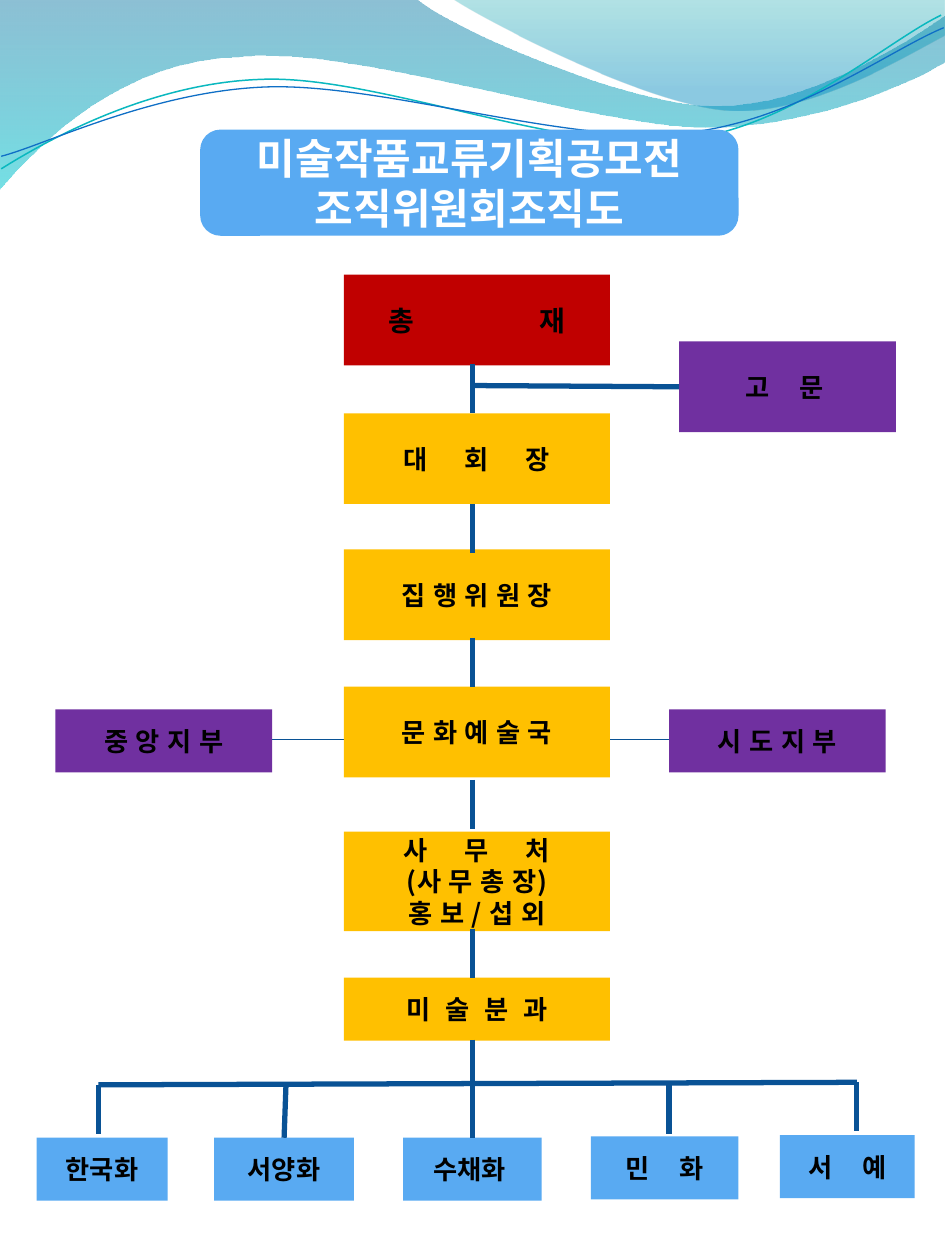
from dataclasses import dataclass

import pptx
import pptx.dml.color
import pptx.enum.shapes
import pptx.enum.text
import pptx.oxml
import pptx.oxml.ns
import pptx.util
from pptx.util import Inches

FONT = "Noto Sans CJK KR"
WIDE_SPACE_EM = 0.28
FONT_SPACE_EM = 0.22
COLORS = {
    "red": "C00000", "gold": "FFC000", "purple": "7030A0", "blue": "59AAF2",
    "line": "095295", "black": "000000", "white": "FFFFFF",
    "wave_blue": "0074A1", "wave_cyan": "00C6CF",
    "crest_teal": "00A1A9", "crest_blue": "008BBF",
    "teal_curve": "0AB8BF", "blue_curve": "0F6FC6",
}
Point = tuple[float, float]
Segment = tuple[Point, ...]
RECT = pptx.enum.shapes.MSO_SHAPE.RECTANGLE
ROUNDED = pptx.enum.shapes.MSO_SHAPE.ROUNDED_RECTANGLE
TOP, LEFT = 0, 1


@dataclass
class Box:
    text: str
    left: float
    top: float
    width: float
    height: float
    fill: str
    size: float = 15
    gap: int = 1
    color: str = "black"
    shape: pptx.enum.shapes.MSO_SHAPE = RECT
    border: float = 0


@dataclass
class Stop:
    position: float
    color: str
    opacity: int


@dataclass
class Wave:
    start: Point
    segments: list[Segment]
    stops: tuple[Stop, Stop]


@dataclass
class Curve:
    start: Point
    segments: list[Segment]
    color: str
    weight: float


TITLE = Box("미술작품교류기획공모전\n조직위원회조직도", 1.62, 1.06, 4.21, 0.78,
            "blue", 24, color="white", shape=ROUNDED, border=4.5)
SPINE = [
    Box("총 재", 2.73, 2.18, 2.11, 0.72, "red", 16, 16),
    Box("대 회 장", 2.73, 3.28, 2.11, 0.72, "gold", gap=5),
    Box("집 행 위 원 장", 2.73, 4.36, 2.11, 0.72, "gold"),
    Box("문 화 예 술 국", 2.73, 5.45, 2.11, 0.72, "gold"),
    Box("사 무 처\n(사 무 총 장)\n홍 보 / 섭 외", 2.73, 6.6, 2.11, 0.79, "gold", gap=5),
    Box("미 술 분 과", 2.73, 7.76, 2.11, 0.5, "gold", gap=2),
]
SPINE_X = 3.75
SPINE_TOPS = [2.89, 4, 5.06, 6.19, 7.37, 8.25]
DROP = 0.39
BRANCHES = [
    Box("시 도 지 부", 5.31, 5.63, 1.72, 0.5, "purple"),
    Box("중 앙 지 부", 0.44, 5.63, 1.72, 0.5, "purple"),
]
ADVISOR = Box("고 문 ", 5.39, 2.71, 1.72, 0.72, "purple", gap=4)
DIVISIONS = [
    Box("한국화", 0.29, 9.03, 1.04, 0.5, "blue"),
    Box("서양화", 1.7, 9.03, 1.11, 0.5, "blue"),
    Box("수채화 ", 3.2, 9.03, 1.1, 0.5, "blue"),
    Box("민 화", 4.69, 9.02, 1.17, 0.5, "blue", gap=4),
    Box("서 예", 6.19, 9.01, 1.07, 0.5, "blue", gap=4),
]
DROPS = [(0.78, 8.61), (2.27, 8.61), (SPINE_X, 8.61), (5.31, 8.61), (6.8, 8.59)]
WAVES = [
    Wave((0, -0.01),
         [((3.3, -0.01),),
          ((3.57, 0.22), (4.98, 0.84), (5.69, 0.84)),
          ((6.4, 0.84), (7.19, 0.34), (7.5, 0.12)),
          ((7.51, 0.48),),
          ((7.38, 0.58), (6.52, 1.01), (5.59, 1.01)),
          ((4.66, 1), (2.86, 0.37), (1.93, 0.45)),
          ((0.97, 0.47), (0.34, 1.11), (-0.01, 1.51)),
          ((0, -0.01),)],
         (Stop(0, "wave_blue", 45), Stop(1, "wave_cyan", 55))),
    Wave((3.59, -0.01),
         [((3.82, 0.15), (5.11, 0.82), (5.77, 0.87)),
          ((6.42, 0.92), (7.21, 0.43), (7.5, 0.28)),
          ((7.5, 0),),
          ((3.59, -0.01),)],
         (Stop(0, "crest_teal", 30), Stop(0.8, "crest_blue", 45))),
]
CURVES = [
    Curve((0.01, 1.34),
          [((0.36, 1.12), (1.18, 0.66), (2.07, 0.63)),
           ((2.96, 0.59), (4.45, 1.21), (5.35, 1.12)),
           ((6.26, 1.04), (7.03, 0.33), (7.47, 0.12))], "teal_curve", 0.85),
    Curve((0.01, 1.24),
          [((0.36, 1.15), (1.22, 0.72), (2.12, 0.69)),
           ((3.02, 0.66), (4.49, 1.14), (5.38, 1.06)),
           ((6.28, 0.99), (7.05, 0.4), (7.49, 0.22))], "blue_curve", 0.75),
]


def rgb(name: str) -> pptx.dml.color.RGBColor:
    return pptx.dml.color.RGBColor.from_string(COLORS[name])


def element(tag: str, **attributes):
    node = pptx.oxml.xmlchemy.OxmlElement(tag)
    for name, value in attributes.items():
        node.set(name, str(value))
    return node


def draw_outline(s, start: Point, segments: list[Segment], close: bool):
    builder = s.shapes.build_freeform(*map(Inches, start))
    builder.add_line_segments([tuple(map(Inches, seg[-1])) for seg in segments], close=close)
    sp = builder.convert_to_shape()
    sp.shadow.inherit = False
    lines = list(sp._element.iter(pptx.oxml.ns.qn("a:lnTo")))
    for line, segment in zip(lines, segments):
        if len(segment) == 3:
            bezier = element("a:cubicBezTo")
            for x, y in segment:
                bezier.append(element("a:pt", x=Inches(x) - sp.left, y=Inches(y) - sp.top))
            line.getparent().replace(line, bezier)
    return sp


def draw_wave(s, wave: Wave) -> None:
    sp = draw_outline(s, wave.start, wave.segments, True)
    sp.line.fill.background()
    sp.fill.gradient()
    sp.fill.gradient_angle = 270
    for target, stop in zip(sp.fill.gradient_stops, wave.stops):
        target.position = stop.position
        target.color.rgb = rgb(stop.color)
    colors = list(sp._element.spPr.iter(pptx.oxml.ns.qn("a:srgbClr")))
    for color, stop in zip(colors, wave.stops):
        color.append(element("a:alpha", val=stop.opacity * 1000))


def draw_curve(s, curve: Curve) -> None:
    sp = draw_outline(s, curve.start, curve.segments, False)
    sp.fill.background()
    sp.line.color.rgb = rgb(curve.color)
    sp.line.width = pptx.util.Pt(curve.weight)


def add_text(p, text: str, spacing: float = 0) -> None:
    r = p.add_run()
    r.text = text
    if spacing:
        r._r.get_or_add_rPr().set("spc", str(round(spacing * 100)))


def write_line(p, text: str, box: Box, gap: int) -> None:
    p.alignment = pptx.enum.text.PP_ALIGN.CENTER
    p.font.size = pptx.util.Pt(box.size)
    p.font.bold = True
    p.font.name = FONT
    p.font.color.rgb = rgb(box.color)
    p.font._rPr.append(element("a:ea", typeface=FONT))
    extra = (gap * WIDE_SPACE_EM - FONT_SPACE_EM) * box.size
    if gap == 1:
        add_text(p, text, extra / 2 if " " in text.strip() else 0)
        return
    for i, word in enumerate(text.split()):
        if i:
            add_text(p, " ", extra)
        add_text(p, word + " " * (text.endswith(word + " ")))


def draw_box(s, box: Box):
    sp = s.shapes.add_shape(box.shape, *map(Inches, (box.left, box.top, box.width, box.height)))
    sp.shadow.inherit = False
    sp.fill.solid()
    sp.fill.fore_color.rgb = rgb(box.fill)
    if box.border:
        sp.line.color.rgb = rgb(box.fill)
        sp.line.width = pptx.util.Pt(box.border)
    else:
        sp.line.fill.background()
    tf = sp.text_frame
    tf.word_wrap = True
    tf.vertical_anchor = pptx.enum.text.MSO_ANCHOR.MIDDLE
    for i, text in enumerate(box.text.split("\n")):
        p = tf.add_paragraph() if i else tf.paragraphs[0]
        write_line(p, text, box, 1 if i else box.gap)
    return sp


def draw_line(s, start: Point, end: Point, weight: float = 3):
    line = s.shapes.add_connector(pptx.enum.shapes.MSO_CONNECTOR.STRAIGHT,
                                  *map(Inches, (*start, *end)))
    line.line.color.rgb = rgb("line")
    line.line.width = pptx.util.Pt(weight)
    line._element.spPr.append(element("a:effectLst"))
    return line


def main() -> None:
    prs = pptx.Presentation()
    prs.slide_width, prs.slide_height = Inches(7.5), Inches(10)
    s = prs.slides.add_slide(prs.slide_layouts[6])
    for wave in WAVES:
        draw_wave(s, wave)
    for curve in CURVES:
        draw_curve(s, curve)
    draw_box(s, TITLE)
    for left in (4.69, 2.03):
        draw_line(s, (left, 5.87), (left + 0.7, 5.87), 0.75)
    for box in SPINE + BRANCHES:
        draw_box(s, box)
    for y in SPINE_TOPS:
        draw_line(s, (SPINE_X, y), (SPINE_X, y + DROP))
    advisor = draw_box(s, ADVISOR)
    draw_line(s, (SPINE_X, 3.06), (ADVISOR.left, 3.06)).end_connect(advisor, LEFT)
    draw_line(s, DROPS[0], DROPS[-1])
    for box, (x, y) in zip(DIVISIONS, DROPS):
        sp = draw_box(s, box)
        drop = draw_line(s, (x, y), (x, y + DROP))
        if abs(box.left + box.width / 2 - x) < 0.02:
            drop.end_connect(sp, TOP)
    prs.save("out.pptx")


if __name__ == "__main__":
    main()
